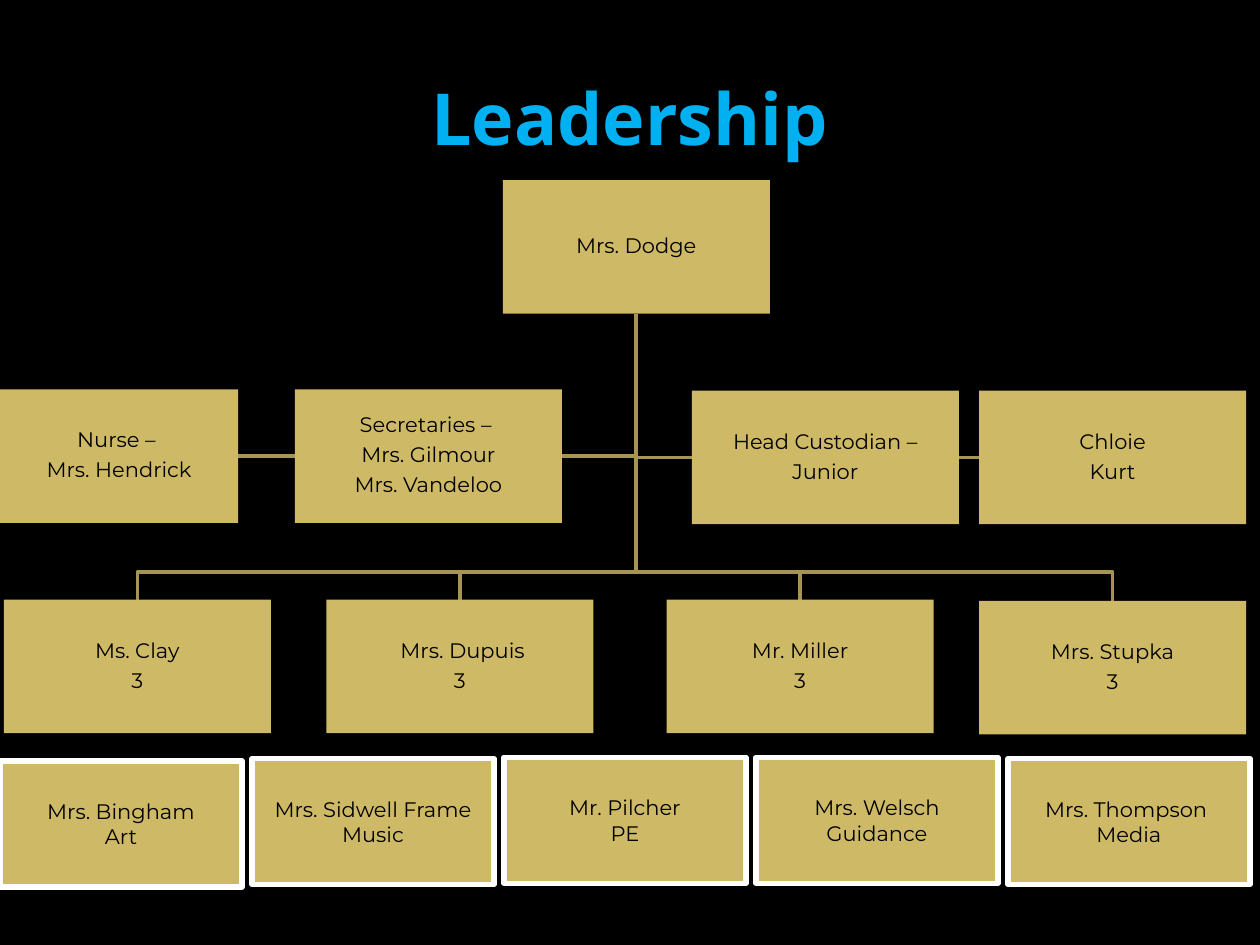
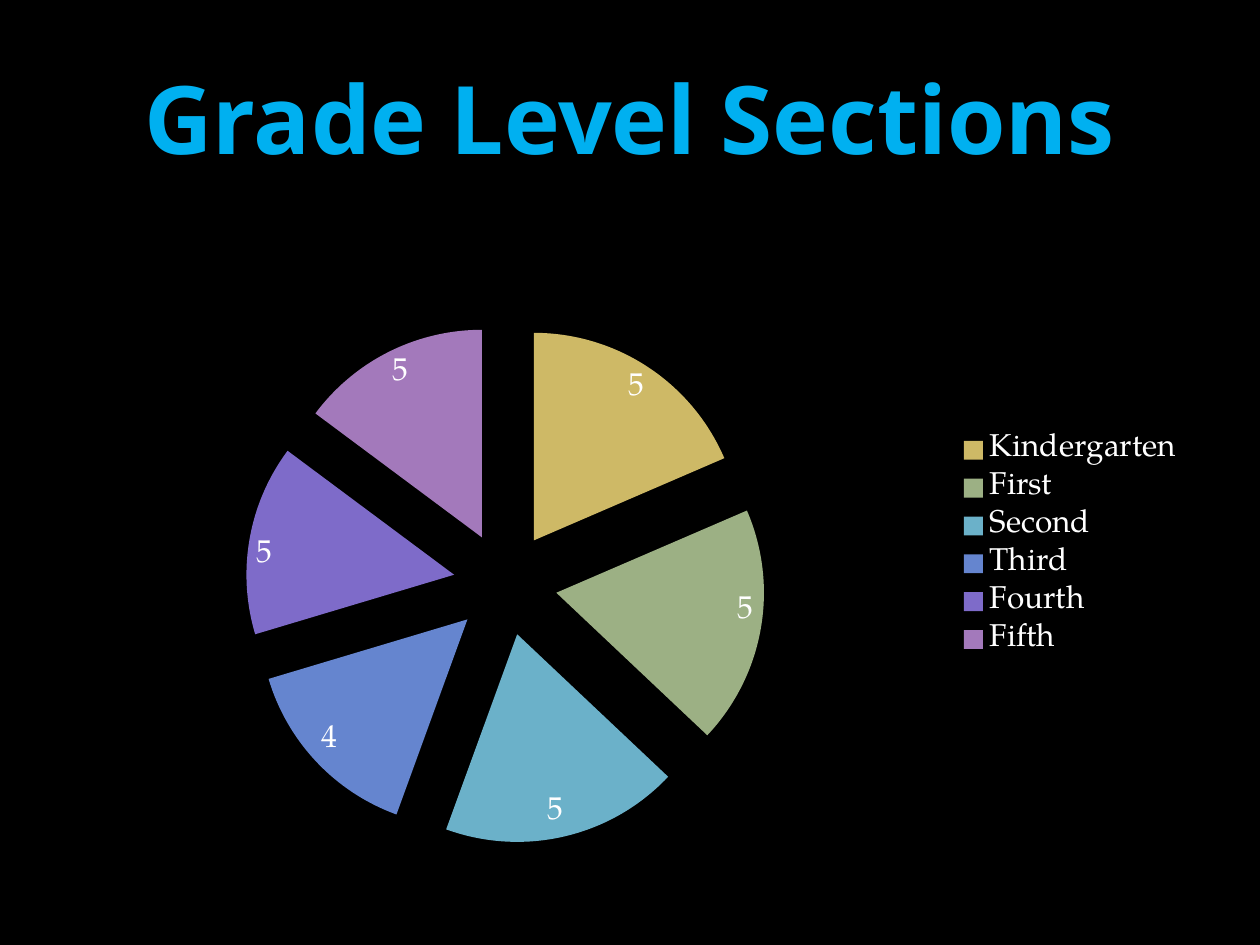
"""Build two school slides: a leadership chart and the grade level sections."""
from pptx import Presentation
from pptx.chart.data import CategoryChartData
from pptx.dml.color import RGBColor
from pptx.enum.chart import XL_CHART_TYPE as ChartType
from pptx.enum.chart import XL_LABEL_POSITION as LabelPosition
from pptx.enum.chart import XL_LEGEND_POSITION as LegendPosition
from pptx.enum.shapes import MSO_SHAPE as Preset
from pptx.enum.text import MSO_ANCHOR as Anchor
from pptx.enum.text import PP_ALIGN as Align
from pptx.oxml import parse_xml
from pptx.oxml.ns import nsdecls, qn
from pptx.util import Inches, Pt

BLACK = RGBColor(0x00, 0x00, 0x00)
WHITE = RGBColor(0xFF, 0xFF, 0xFF)
SKY = RGBColor(0x00, 0xB0, 0xF0)
GOLD = RGBColor(0xCE, 0xB9, 0x66)
BRONZE = RGBColor(0xA5, 0x94, 0x52)
SAGE = RGBColor(0x9C, 0xB0, 0x84)
TEAL = RGBColor(0x6B, 0xB1, 0xC9)
BLUE = RGBColor(0x65, 0x85, 0xCF)
VIOLET = RGBColor(0x7E, 0x6B, 0xC9)
MAUVE = RGBColor(0xA3, 0x79, 0xBB)

TITLE_FONT = "Open Sans"
BOX_FONT = "Montserrat"
CHART_FONT = "TeX Gyre Pagella"


def write(frame, text, size=12, font=BOX_FONT, color=BLACK, bold=False,
          inset=None, line_spacing=None, space_after=None):
    frame.word_wrap = True
    frame.vertical_anchor = Anchor.MIDDLE
    if inset is not None:
        frame.margin_left = frame.margin_right = Inches(inset)
        frame.margin_top = frame.margin_bottom = Inches(inset)
    frame.text = text
    for paragraph in frame.paragraphs:
        paragraph.alignment = Align.CENTER
        paragraph.line_spacing = line_spacing
        paragraph.space_after = space_after
        paragraph.font.size = Pt(size)
        paragraph.font.name = font
        paragraph.font.color.rgb = color
        paragraph.font.bold = bold


def add_box(slide, left, top, width, height, text, border=None, **text_format):
    box = slide.shapes.add_shape(Preset.RECTANGLE, Inches(left), Inches(top),
                                 Inches(width), Inches(height))
    box.shadow.inherit = False
    box.fill.solid()
    box.fill.fore_color.rgb = GOLD
    if border is None:
        box.line.fill.background()
    else:
        box.line.color.rgb = border
        box.line.width = Pt(3)
    write(box.text_frame, text, **text_format)


deck = Presentation()
deck.slide_width, deck.slide_height = Inches(10), Inches(7.5)
slides = []
for heading, heading_size in [("Leadership", 41), ("Grade Level Sections", 54)]:
    slide = deck.slides.add_slide(deck.slide_layouts[6])
    slide.background.fill.solid()
    slide.background.fill.fore_color.rgb = BLACK
    title = slide.shapes.add_textbox(Inches(0.5), Inches(0.3), Inches(9), Inches(1.25))
    write(title.text_frame, heading, size=heading_size, font=TITLE_FONT,
          color=SKY, bold=True)
    slides.append(slide)
leadership, sections = slides

BOX_W, BOX_H = 2.12, 1.06
principal = (3.99, 1.43, BOX_W, "Mrs. Dodge")
support_staff = [
    (0, 3.09, 1.89, "Nurse – \nMrs. Hendrick"),
    (2.34, 3.09, BOX_W, "Secretaries – \nMrs. Gilmour\nMrs. Vandeloo"),
    (5.49, 3.1, BOX_W, " Head Custodian – \nJunior"),
    (7.77, 3.1, BOX_W, "Chloie\nKurt"),
]
teachers = [
    (0.03, 4.76, BOX_W, "Ms. Clay\n3"),
    (2.59, 4.76, BOX_W, " Mrs. Dupuis\n3"),
    (5.29, 4.76, BOX_W, "Mr. Miller\n3"),
    (7.77, 4.77, BOX_W, "Mrs. Stupka\n3"),
]

trunk_x = principal[0] + BOX_W / 2
trunk_top = principal[1] + BOX_H
branch_y = 4.54
branches = []
for left, top, width, _ in support_staff:
    near_side = left if left > trunk_x else left + width
    middle = top + BOX_H / 2
    branches.append([(trunk_x, middle), (near_side, middle)])
for left, top, width, _ in teachers:
    center = left + width / 2
    branches.append([(trunk_x, branch_y), (center, branch_y), (center, top)])

for branch in branches:
    outline = leadership.shapes.build_freeform(Inches(trunk_x), Inches(trunk_top))
    outline.add_line_segments([(Inches(x), Inches(y)) for x, y in branch], close=False)
    link = outline.convert_to_shape()
    link.shadow.inherit = False
    link.fill.background()
    link.line.color.rgb = BRONZE
    link.line.width = Pt(2)

for left, top, width, names in [principal, *teachers, *support_staff]:
    add_box(leadership, left, top, width, BOX_H, names, inset=0.01,
            line_spacing=0.9, space_after=Pt(4.2))

specialists = [
    (6.04, "Mrs. Bingham\nArt"),
    (6.02, "Mrs. Sidwell Frame\nMusic"),
    (6.01, "Mr. Pilcher\nPE"),
    (6.01, "Mrs. Welsch\nGuidance"),
    (6.02, "Mrs. Thompson \nMedia"),
]
for column, (top, names) in enumerate(specialists):
    add_box(leadership, 2 * column, top, 1.92, 1, names, border=WHITE)

grades = [
    ("Kindergarten", 5, GOLD),
    ("First", 5, SAGE),
    ("Second", 5, TEAL),
    ("Third", 4, BLUE),
    ("Fourth", 4, VIOLET),
    ("Fifth", 4, MAUVE),
]
relabeled = {"Fourth": "5", "Fifth": "5"}

section_data = CategoryChartData()
section_data.categories = [grade for grade, _, _ in grades]
section_data.add_series("Teachers", [count for _, count, _ in grades])
pie = sections.shapes.add_chart(ChartType.PIE_EXPLODED, Inches(0.5), Inches(1.75),
                                Inches(9), Inches(5.15), section_data).chart
pie.has_title = False
pie.font.size = Pt(18)
pie.font.name = CHART_FONT
pie.font.color.rgb = WHITE
pie.has_legend = True
pie.legend.position = LegendPosition.RIGHT
pie.legend.include_in_layout = False
pie.plots[0].vary_by_categories = True

slices = pie.plots[0].series[0]
counts = slices.data_labels
counts.show_value = True
counts.show_percentage = False
counts.position = LabelPosition.INSIDE_END
for index, (grade, _, color) in enumerate(grades):
    point = slices.points[index]
    point.format.fill.solid()
    point.format.fill.fore_color.rgb = color
    if grade in relabeled:
        write(point.data_label.text_frame, relabeled[grade], size=18,
              font=CHART_FONT, color=WHITE)
        point.data_label.position = LabelPosition.INSIDE_END

plot_area = pie.element.chart.plotArea
for automatic_layout in plot_area.findall(qn("c:layout")):
    plot_area.remove(automatic_layout)
plot_area.insert(0, parse_xml(
    f'<c:layout {nsdecls("c")}><c:manualLayout><c:layoutTarget val="inner"/>'
    '<c:xMode val="edge"/><c:yMode val="edge"/><c:x val="0.02"/><c:y val="0.16"/>'
    '<c:w val="0.74"/><c:h val="0.8"/></c:manualLayout></c:layout>'))

deck.save("out.pptx")
